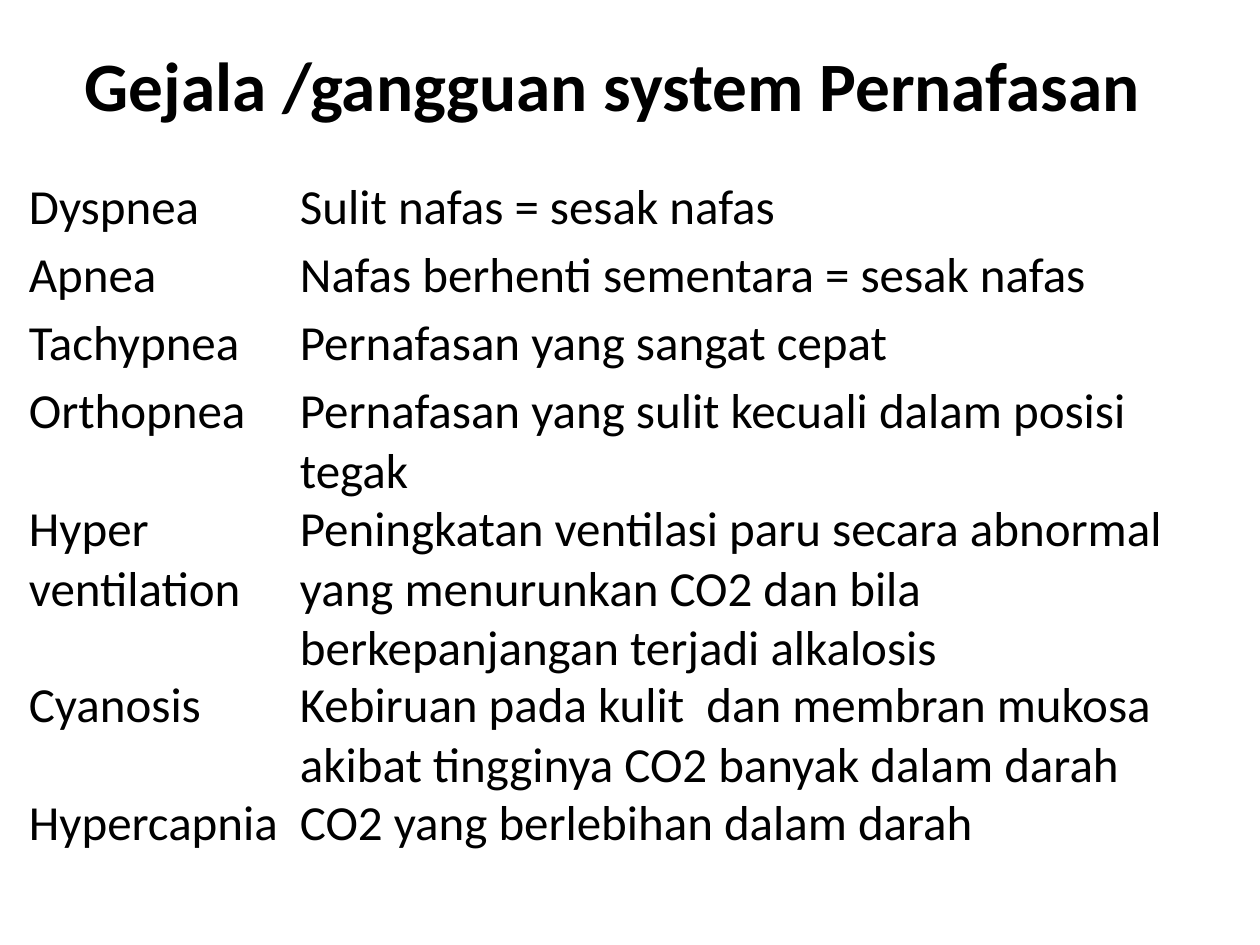
from lxml import etree
from pptx import Presentation
from pptx.dml.color import RGBColor
from pptx.enum.text import MSO_ANCHOR, PP_ALIGN
from pptx.oxml.ns import qn
from pptx.util import Pt

MID = MSO_ANCHOR.MIDDLE
TOP = MSO_ANCHOR.TOP
CENTER = PP_ALIGN.CENTER
BLACK = RGBColor(0, 0, 0)
WHITE = RGBColor(255, 255, 255)
HEAD = {"name": "Calibri", "size": Pt(39.6), "bold": True}
BODY = {"name": "Calibri", "size": Pt(28), "bold": False}
COLS = [271, 949]
ROWS = [
    (68, "Dyspnea", "Sulit nafas = sesak nafas"),
    (68, "Apnea", "Nafas berhenti sementara = sesak nafas"),
    (68, "Tachypnea", "Pernafasan yang sangat cepat"),
    (68, "Orthopnea", "Pernafasan yang sulit kecuali dalam posisi tegak"),
    (149, "Hyper ventilation", "Peningkatan ventilasi paru secara abnormal yang "
     "menurunkan CO2 dan bila berkepanjangan terjadi alkalosis"),
    (100, "Cyanosis", "Kebiruan pada kulit  dan membran mukosa akibat "
     "tingginya CO2 banyak dalam darah"),
    (68, "Hypercapnia", "CO2 yang berlebihan dalam darah"),
]


def px(n):
    """Turn px into EMU."""
    return round(n * 914400 / 126)


def put(item, values):
    """Set each value on the item."""
    for key, value in values.items():
        setattr(item, key, value)


def write(para, text, form):
    """Write one run of black text."""
    run = para.add_run()
    run.text = text
    put(run.font, form)
    run.font.color.rgb = BLACK


def edge(cell, base):
    """Draw the four white cell borders, the lower one base points wide."""
    props = cell._tc.get_or_add_tcPr()
    for side, width in (("L", 1), ("R", 1), ("T", 1), ("B", base)):
        line = etree.SubElement(props, qn("a:ln" + side), w=str(Pt(width)))
        fill = etree.SubElement(line, qn("a:solidFill"))
        etree.SubElement(fill, qn("a:srgbClr"), val=str(WHITE))


def title(slide, left, top, width, height):
    """Place the heading in its box."""
    box = slide.shapes.add_textbox(px(left), px(top), px(width), px(height))
    frame = box.text_frame
    put(frame, {"word_wrap": True, "vertical_anchor": MID})
    para = frame.paragraphs[0]
    para.alignment = CENTER
    write(para, "Gejala /gangguan system Pernafasan", HEAD)


def terms(slide, left, top):
    """Place the table of terms at its corner."""
    high = sum(row[0] for row in ROWS)
    shape = slide.shapes.add_table(len(ROWS), len(COLS), px(left), px(top),
                                   px(sum(COLS)), px(high))
    table = shape.table
    put(table, {"first_row": False, "horz_banding": False})
    for col, width in zip(table.columns, COLS):
        col.width = px(width)
    pad = {"margin_left": px(9), "margin_right": px(9), "margin_top": 0,
           "margin_bottom": 0, "vertical_anchor": TOP}
    for i, (tall, *texts) in enumerate(ROWS):
        table.rows[i].height = px(tall)
        for cell, text in zip(table.rows[i].cells, texts):
            put(cell, pad)
            edge(cell, 1 if i else 3)
            cell.fill.background()
            write(cell.text_frame.paragraphs[0], text, BODY)


def main():
    """Build and save the slide."""
    deck = Presentation()
    put(deck, {"slide_width": px(1260), "slide_height": px(945)})
    slide = deck.slides.add_slide(deck.slide_layouts[6])
    title(slide, 63, 38, 1099, 91)
    terms(slide, 20, 178)
    deck.save("out.pptx")


if __name__ == "__main__":
    main()
